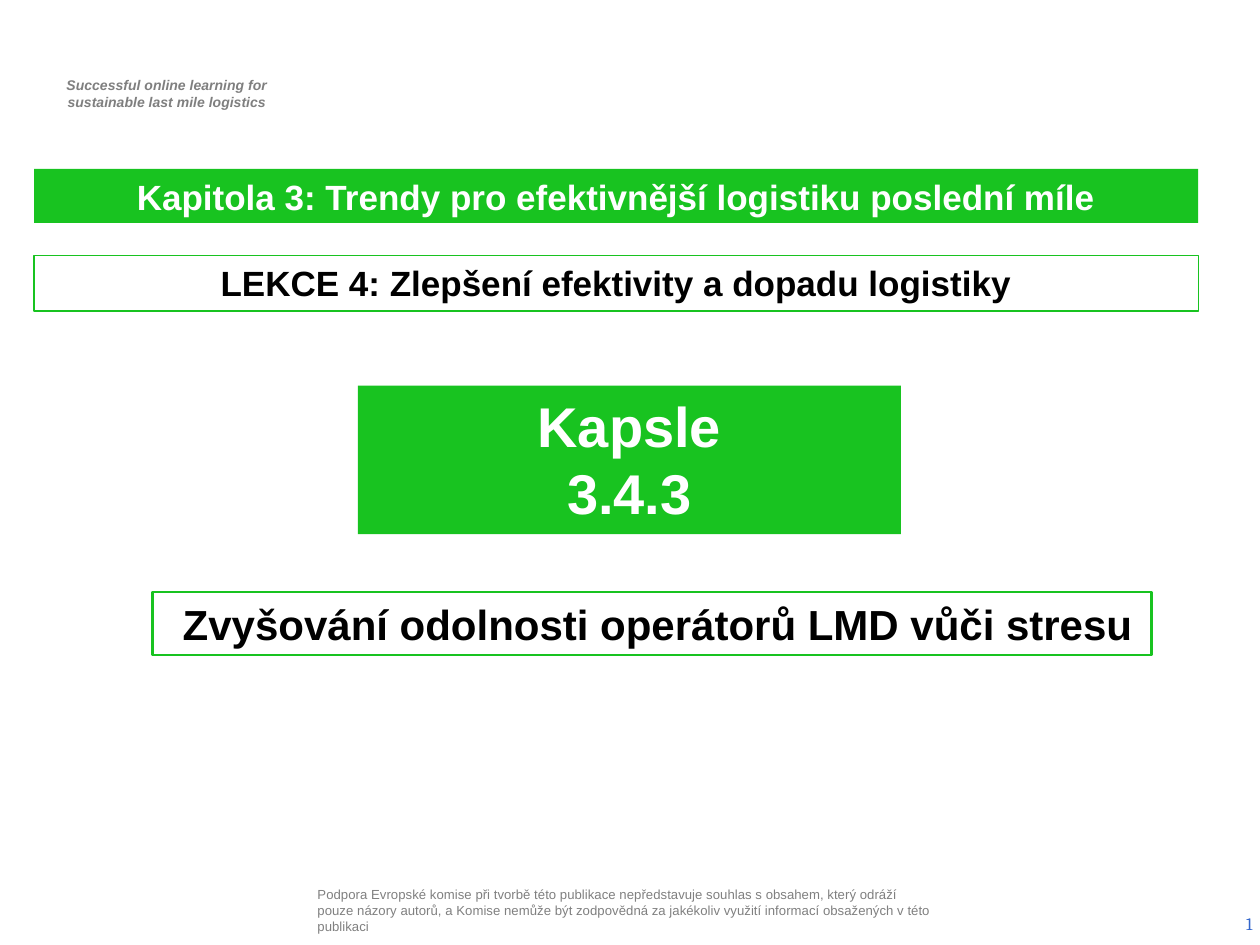
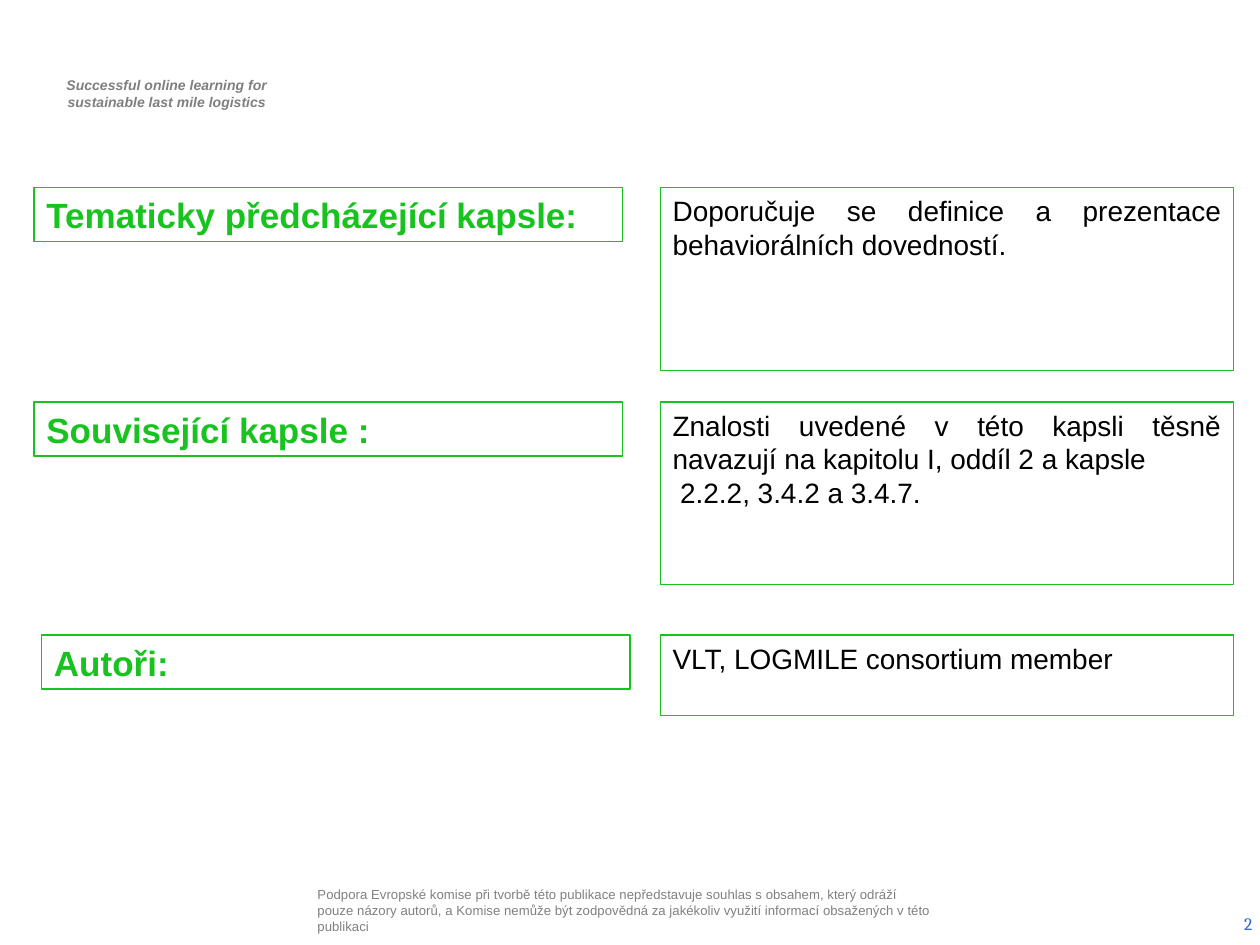
from dataclasses import dataclass

from lxml import etree
from pptx import Presentation
from pptx.dml.color import RGBColor
from pptx.enum.shapes import MSO_SHAPE
from pptx.enum.text import MSO_ANCHOR, MSO_AUTO_SIZE, PP_ALIGN
from pptx.oxml.ns import qn
from pptx.util import Inches, Pt

RECTANGLE = MSO_SHAPE.RECTANGLE
TOP, MIDDLE = MSO_ANCHOR.TOP, MSO_ANCHOR.MIDDLE
NO_AUTOFIT = MSO_AUTO_SIZE.NONE
LEFT, CENTER, RIGHT, JUSTIFY = PP_ALIGN.LEFT, PP_ALIGN.CENTER, PP_ALIGN.RIGHT, PP_ALIGN.JUSTIFY
TITLE_ONLY, BLANK = 5, 6


@dataclass(frozen=True)
class Theme:
    green: str = "18C320"
    white: str = "FFFFFF"
    black: str = "000000"
    tagline_gray: str = "7F7F7F"
    footer_gray: str = "808080"
    number_blue: str = "3366CC"
    font: str = "Arial"
    number_font: str = "Cambria"
    capsule_size: float = 32
    topic_size: float = 24
    heading_size: float = 20
    body_size: float = 16
    number_size: float = 10
    tagline_size: float = 8
    footer_size: float = 7.5
    thin_line: float = 0.75
    thick_line: float = 1.5


class Deck:
    """Places elements on a grid of 100 columns by 75 rows."""

    def __init__(self, theme):
        self.theme = theme
        self.presentation = Presentation()
        self.presentation.slide_width = Inches(10)
        self.presentation.slide_height = Inches(7.5)
        self.column = self.presentation.slide_width / 100
        self.row = self.presentation.slide_height / 75
        self.slide = None

    def add_slide(self, layout):
        self.slide = self.presentation.slides.add_slide(
            self.presentation.slide_layouts[layout])
        self.tagline()
        self.footer()
        self.slide_number()

    def place(self, left, top, width, height):
        return (round(left * self.column), round(top * self.row),
                round(width * self.column), round(height * self.row))

    def set_text(self, shape, text, size, color, bold=False, italic=False,
                 align=LEFT, anchor=TOP, font=None):
        frame = shape.text_frame
        frame.text = text
        frame.word_wrap = True
        frame.auto_size = NO_AUTOFIT
        frame.vertical_anchor = anchor
        for paragraph in frame.paragraphs:
            paragraph.alignment = align
            for run in paragraph.runs:
                run.font.name = font or self.theme.font
                run.font.size = Pt(size)
                run.font.bold = bold
                run.font.italic = italic
                run.font.color.rgb = RGBColor.from_string(color)
        return shape

    def indent(self, paragraph, inches):
        properties = paragraph._p.get_or_add_pPr()
        properties.set("marL", str(Inches(inches)))
        properties.set("indent", "0")

    def text(self, area, text, size, color, **style):
        box = self.slide.shapes.add_textbox(*self.place(*area))
        return self.set_text(box, text, size, color, **style)

    def box(self, area, text, size, color, fill=None, line=None, **style):
        shape = self.slide.shapes.add_shape(RECTANGLE, *self.place(*area))
        shape.shadow.inherit = False
        if fill:
            shape.fill.solid()
            shape.fill.fore_color.rgb = RGBColor.from_string(fill)
        else:
            shape.fill.background()
        if line:
            shape.line.color.rgb = RGBColor.from_string(self.theme.green)
            shape.line.width = Pt(line)
        else:
            shape.line.fill.background()
        return self.set_text(shape, text, size, color, **style)

    def title(self, area, text):
        title = self.slide.shapes.title
        title.left, title.top, title.width, title.height = self.place(*area)
        title.fill.solid()
        title.fill.fore_color.rgb = RGBColor.from_string(self.theme.green)
        self.set_text(title, text, self.theme.heading_size, self.theme.white,
                      bold=True, align=CENTER)

    # Parts found on every slide
    def tagline(self):
        box = self.text(
            (2.9, 5.6, 20.3, 3.7),
            "Successful online learning for\nsustainable last mile logistics",
            self.theme.tagline_size, self.theme.tagline_gray,
            bold=True, italic=True, align=CENTER)
        for paragraph in box.text_frame.paragraphs:
            self.indent(paragraph, 0.04)

    def footer(self):
        box = self.text(
            (24.8, 69.8, 49.6, 4.9),
            "Podpora Evropské komise při tvorbě této publikace nepředstavuje souhlas "
            "s obsahem, který odráží pouze názory autorů, a Komise nemůže být zodpovědná "
            "za jakékoliv využití informací obsažených v této publikaci",
            self.theme.footer_size, self.theme.footer_gray, anchor=MIDDLE)
        frame = box.text_frame
        frame.margin_left = frame.margin_right = Inches(0.04)
        frame.margin_top = frame.margin_bottom = Inches(0.04)

    def slide_number(self):
        box = self.text((77.1, 71.3, 22.9, 4), str(len(self.presentation.slides)),
                        self.theme.number_size, self.theme.number_blue,
                        align=RIGHT, anchor=MIDDLE, font=self.theme.number_font)
        box.text_frame.margin_right = Inches(0.06)
        # Turn the run into a slide number field
        run = box.text_frame.paragraphs[0].runs[0]._r
        field = etree.Element(qn("a:fld"), type="slidenum",
                              id="{B6F15528-21DE-4FAA-801E-634DDDAF4B2B}")
        run.addprevious(field)
        field.extend(list(run))
        run.getparent().remove(run)


def build_cover(deck):
    theme = deck.theme
    deck.add_slide(TITLE_ONLY)
    deck.title((2.7, 13.4, 92.4, 4.3),
               "Kapitola 3: Trendy pro efektivnější logistiku poslední míle")
    deck.box((2.7, 20.3, 92.4, 4.4), "LEKCE 4: Zlepšení efektivity a dopadu logistiky",
             theme.heading_size, theme.black, line=theme.thin_line,
             bold=True, align=CENTER)
    deck.box((28.4, 30.6, 43.1, 11.8), "Kapsle\n3.4.3", theme.capsule_size,
             theme.white, fill=theme.green, bold=True, align=CENTER)
    topic = deck.box((12.1, 47, 79.3, 5), "Zvyšování odolnosti operátorů LMD vůči stresu",
                     theme.topic_size, theme.black, line=theme.thick_line,
                     bold=True, align=CENTER)
    deck.indent(topic.text_frame.paragraphs[0], 0.09)


def build_context(deck):
    theme = deck.theme
    deck.add_slide(BLANK)
    # Heading, heading column, row, answer height, answer, answer alignment
    entries = [
        ("Tematicky předcházející kapsle:", 2.7, 14.9, 14.5,
         "Doporučuje se definice a prezentace behaviorálních dovedností.", JUSTIFY),
        ("Související kapsle :", 2.7, 31.9, 14.5,
         "Znalosti uvedené v této kapsli těsně navazují na kapitolu I, oddíl 2 a kapsle\n"
         "2.2.2, 3.4.2 a 3.4.7.", JUSTIFY),
        ("Autoři:", 3.3, 50.4, 6.4, "VLT, LOGMILE consortium member", LEFT),
    ]
    for heading, left, top, height, answer, align in entries:
        deck.box((left, top, 46.7, 4.3), heading, theme.heading_size, theme.green,
                 fill=theme.white, line=theme.thin_line, bold=True)
        answer_box = deck.box((52.4, top, 45.5, height), answer, theme.body_size,
                              theme.black, fill=theme.white, line=theme.thin_line,
                              align=align)
        for paragraph in answer_box.text_frame.paragraphs[1:]:
            deck.indent(paragraph, 0.06)


def main():
    deck = Deck(Theme())
    build_cover(deck)
    build_context(deck)
    deck.presentation.save("out.pptx")


if __name__ == "__main__":
    main()
